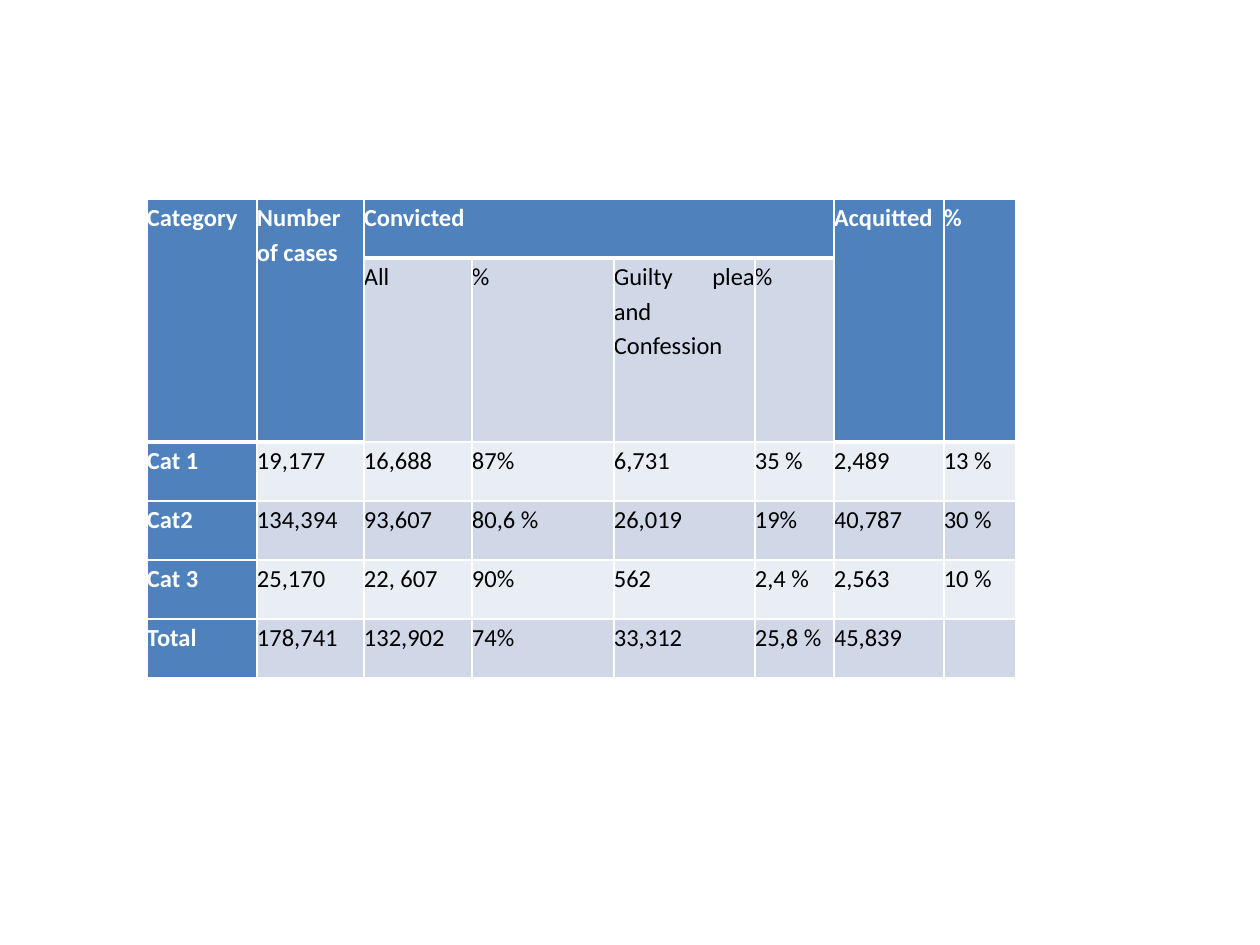
from lxml.etree import SubElement
from pptx import Presentation
from pptx.dml.color import RGBColor
from pptx.enum.text import MSO_ANCHOR, PP_ALIGN as Align
from pptx.oxml.ns import qn
from pptx.util import Emu, Pt

PX_PER_INCH = 126
BLUE, BAND_DARK, BAND_LIGHT = "4F81BD", "D0D8E8", "E9EDF4"
WHITE, BLACK = "FFFFFF", "000000"

LEFT, TOP = 147, 199
COLUMN_WIDTHS = [110, 107, 108, 142, 141, 79, 110, 72]
ROW_HEIGHTS = [59, 184, 59, 59, 59, 59]
ROWS = [
    ["Category", "Number of cases", "Convicted", "", "", "", "Acquitted", "%"],
    ["", "", "All", "%", "Guilty plea and Confession", "%", "", ""],
    ["Cat 1", "19,177", "16,688", "87%", "6,731", "35 %", "2,489", "13 %"],
    ["Cat2", "134,394", "93,607", "80,6 %", "26,019", "19%", "40,787", "30 %"],
    ["Cat 3", "25,170", "22, 607", "90%", "562", "2,4 %", "2,563", "10 %"],
    ["Total", "178,741", "132,902", "74%", "33,312", "25,8 %", "45,839", ""],
]
CONVICTED = range(2, 6)  # columns under the "Convicted" heading


def px(length):
    return Emu(round(length * 914400 / PX_PER_INCH))


def color(value):
    return RGBColor.from_string(value)


def is_header(row, column):
    return row == 0 or (row == 1 and column not in CONVICTED)


def set_borders(cell, widths):
    properties = cell._tc.get_or_add_tcPr()
    for side, width in zip("LRTB", widths):
        line = SubElement(properties, qn(f"a:ln{side}"), w=str(Pt(width)))
        fill = SubElement(line, qn("a:solidFill"))
        SubElement(fill, qn("a:srgbClr"), val=WHITE)


def write_text(cell, text, bold):
    paragraph = cell.text_frame.paragraphs[0]
    paragraph.alignment = Align.JUSTIFY
    paragraph.line_spacing = 1.15
    paragraph.space_after = Pt(10)
    run = paragraph.add_run()
    run.text = text
    run.font.name = "Calibri"
    run.font.size = Pt(14)
    run.font.bold = bold
    run.font.color.rgb = color(WHITE if bold else BLACK)


def style_cell(cell, row, column, text):
    emphasized = is_header(row, column) or column == 0
    band = BAND_DARK if row % 2 else BAND_LIGHT
    top = 3 if row and is_header(row - 1, column) else 1
    bottom = 3 if is_header(row, column) else 1
    set_borders(cell, (1, 1, top, bottom))
    cell.fill.solid()
    cell.fill.fore_color.rgb = color(BLUE if emphasized else band)
    cell.margin_left = cell.margin_right = 0
    cell.margin_top = cell.margin_bottom = 0
    cell.vertical_anchor = MSO_ANCHOR.TOP
    if text:
        write_text(cell, text, emphasized)


def add_case_table(slide):
    frame = slide.shapes.add_table(
        len(ROWS), len(COLUMN_WIDTHS), px(LEFT), px(TOP),
        px(sum(COLUMN_WIDTHS)), px(sum(ROW_HEIGHTS)))
    table = frame.table
    for column, width in zip(table.columns, COLUMN_WIDTHS):
        column.width = px(width)
    for row, height in zip(table.rows, ROW_HEIGHTS):
        row.height = px(height)

    # Header cells that span two rows, and the group heading
    for column in range(len(COLUMN_WIDTHS)):
        if column not in CONVICTED:
            table.cell(0, column).merge(table.cell(1, column))
    table.cell(0, CONVICTED[0]).merge(table.cell(0, CONVICTED[-1]))

    for row, texts in enumerate(ROWS):
        for column, text in enumerate(texts):
            style_cell(table.cell(row, column), row, column, text)


def main():
    presentation = Presentation()
    presentation.slide_width, presentation.slide_height = px(1260), px(945)
    slide = presentation.slides.add_slide(presentation.slide_layouts[6])
    add_case_table(slide)
    presentation.save("out.pptx")


if __name__ == "__main__":
    main()
